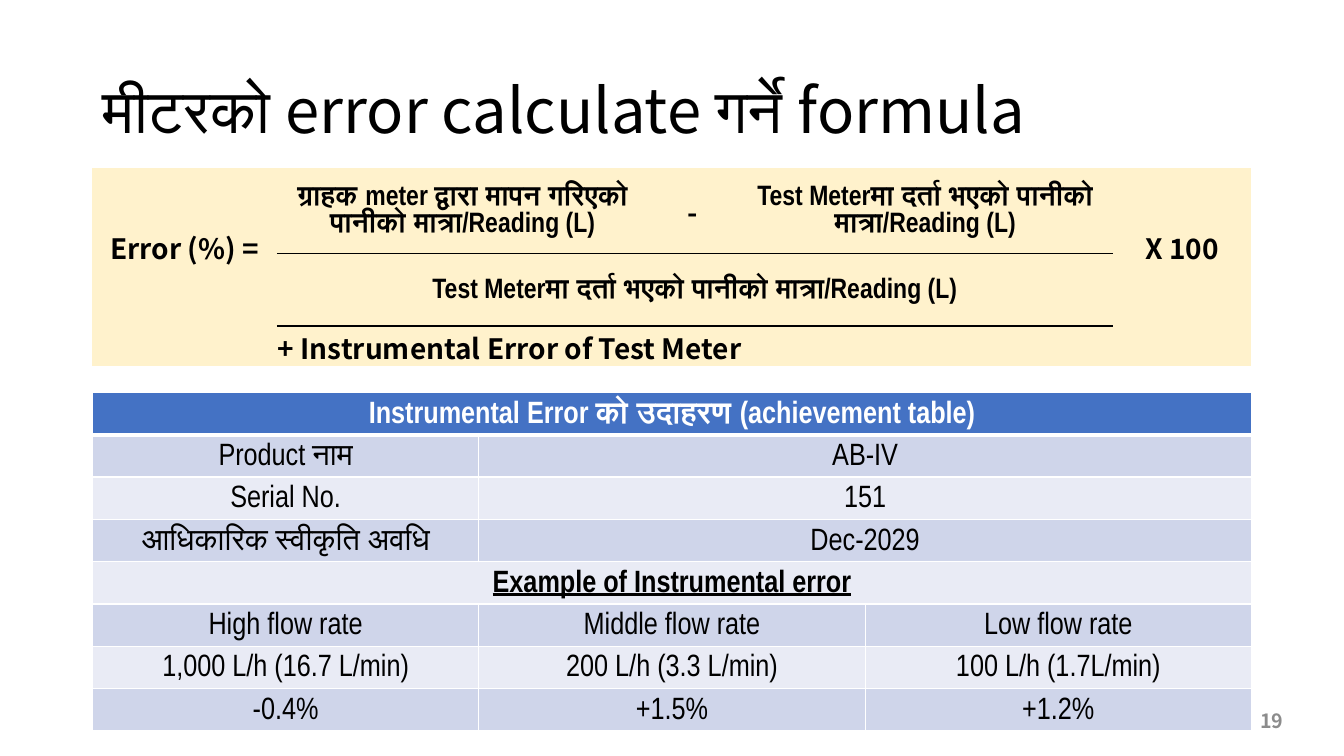
from dataclasses import dataclass

from lxml import etree
from pptx import Presentation
from pptx.dml.color import RGBColor
from pptx.enum.text import MSO_ANCHOR, PP_ALIGN
from pptx.oxml.ns import qn
from pptx.util import Cm, Pt

LEFT, MID, RIGHT = PP_ALIGN.LEFT, PP_ALIGN.CENTER, PP_ALIGN.RIGHT
TOP, CENTER = MSO_ANCHOR.TOP, MSO_ANCHOR.MIDDLE
PLAIN = "{2D5ABB26-0587-4C30-8999-92F81FD0307C}"  # no style, no grid


@dataclass(frozen=True)
class Theme:
    sans: str = "Noto Sans CJK JP"
    slim: str = "Arial Narrow"
    ink: str = "000000"
    white: str = "FFFFFF"
    grey: str = "8C8C8C"
    cream: str = "FFF2CC"
    blue: str = "4472C4"
    dark: str = "CFD5EA"
    light: str = "E9EBF5"
    title: int = 44
    body: int = 22
    sums: int = 20
    small: int = 14


def write(frame, text, font, size, color, bold=False, under=False,
          align=LEFT, space=None):
    para = frame.paragraphs[0]
    para.alignment = align
    if space:
        para.line_spacing = space
    run = para.add_run()
    run.text = text
    run.font.name = font
    run.font.size = Pt(size)
    run.font.bold = bold
    run.font.underline = under
    run.font.color.rgb = RGBColor.from_string(color)


def paint(cell, fill, edges):
    """Set cell borders, given as {side: (colour, points)}, then the fill."""
    props = cell._tc.get_or_add_tcPr()
    for side in "LRTB":
        if side in edges:
            color, width = edges[side]
            line = etree.SubElement(props, qn("a:ln" + side), w=str(Pt(width)))
            solid = etree.SubElement(line, qn("a:solidFill"))
            etree.SubElement(solid, qn("a:srgbClr"), val=color)
    cell.fill.solid()
    cell.fill.fore_color.rgb = RGBColor.from_string(fill)


class Deck:
    def __init__(self, theme):
        self.theme = theme
        self.file = Presentation()
        self.file.slide_width, self.file.slide_height = Cm(33.87), Cm(19.05)
        self.slide = self.file.slides.add_slide(self.file.slide_layouts[6])

    def label(self, text, box, **style):
        frame = self.slide.shapes.add_textbox(*map(Cm, box)).text_frame
        frame.word_wrap = True
        frame.vertical_anchor = CENTER
        write(frame, text, self.theme.sans, **style)

    def table(self, left, top, cols, rows, spans):
        """Add a bare table; spans holds (row, col, last row, last col)."""
        grid = self.slide.shapes.add_table(
            len(rows), len(cols), Cm(left), Cm(top),
            Cm(sum(cols)), Cm(sum(rows))).table
        grid._tbl.tblPr.find(qn("a:tableStyleId")).text = PLAIN
        for col, width in zip(grid.columns, cols):
            col.width = Cm(width)
        for row, height in zip(grid.rows, rows):
            row.height = Cm(height)
        for row, col, end, last in spans:
            grid.cell(row, col).merge(grid.cell(end, last))
        return grid

    def formula(self, left, top):
        look = self.theme
        part = "Test Meterमा दर्ता भएको पानीको मात्रा/Reading (L)"
        words = {
            (0, 0): ("Error (%) =", look.sans, MID, None),
            (0, 1): ("ग्राहक meter द्वारा मापन गरिएको पानीको मात्रा/Reading (L)",
                     look.slim, MID, 0.95),
            (0, 2): ("-", look.sans, MID, None),
            (0, 3): (part, look.slim, MID, 0.95),
            (0, 4): ("X 100", look.sans, MID, None),
            (1, 1): (part, look.slim, MID, None),
            (2, 1): ("+ Instrumental Error of Test Meter", look.sans, LEFT, None),
        }
        cols, rows = [4.65, 9.35, 2.26, 9.45, 3.5], [2.16, 1.83, 1.01]
        spans = [(0, 0, 1, 0), (0, 4, 1, 4), (1, 1, 1, 3), (2, 1, 2, 3)]
        grid = self.table(left, top, cols, rows, spans)
        bar = (look.ink, 1.5)
        for r in range(len(rows)):
            for c in range(len(cols)):
                cell = grid.cell(r, c)
                edges = {}
                if r < 2 and 1 <= c <= 3:
                    edges = {"B" if r == 0 else "T": bar}
                paint(cell, look.cream, edges)
                cell.vertical_anchor = CENTER
                cell.margin_left = cell.margin_right = cell.margin_top = Cm(0.02)
                cell.margin_bottom = 0
                if (r, c) in words:
                    text, font, align, space = words[r, c]
                    write(cell.text_frame, text, font, look.sums, look.ink,
                          bold=True, align=align, space=space)

    def sample(self, left, top, width, height, lines):
        """Add the example table; a short line's last text spans the rest."""
        look = self.theme
        count = 3
        spans = [(r, len(line) - 1, r, count - 1)
                 for r, line in enumerate(lines) if len(line) < count]
        grid = self.table(left, top, [width / count] * count,
                          [height] * len(lines), spans)
        thin, thick = (look.white, 1), (look.white, 3)
        for r, line in enumerate(lines):
            head = r == 0
            fill = look.blue if head else (look.light, look.dark)[r % 2]
            for c in range(count):
                cell = grid.cell(r, c)
                paint(cell, fill, {"L": thin, "R": thin,
                                   "T": thick if r == 1 else thin,
                                   "B": thick if head else thin})
                cell.vertical_anchor = TOP
                if c < len(line):
                    alone = len(line) == 1
                    write(cell.text_frame, line[c], look.slim, look.body,
                          look.white if head else look.ink, bold=alone,
                          under=alone and not head, align=MID, space=Pt(23))


def main():
    look = Theme()
    deck = Deck(look)
    left, width = 2.33, 29.21
    deck.label("मीटरको error calculate गर्ने formula", (left, 1.01, width, 3.68),
               size=look.title, color=look.ink, space=0.9)
    deck.formula(left, 4.23)
    deck.sample(left, 9.89, width, 1.06, [
        ["Instrumental Error को उदाहरण (achievement table)"],
        ["Product नाम", "AB-IV"],
        ["Serial No.", "151"],
        ["आधिकारिक स्वीकृति अवधि", "Dec-2029"],
        ["Example of Instrumental error"],
        ["High flow rate", "Middle flow rate", "Low flow rate"],
        ["1,000 L/h (16.7 L/min)", "200 L/h (3.3 L/min)", "100 L/h (1.7L/min)"],
        ["-0.4%", "+1.5%", "+1.2%"],
    ])
    deck.label("19", (24.97, 17.65, 7.62, 1.02), size=look.small,
               color=look.grey, bold=True, align=RIGHT)
    deck.file.save("out.pptx")


if __name__ == "__main__":
    main()
